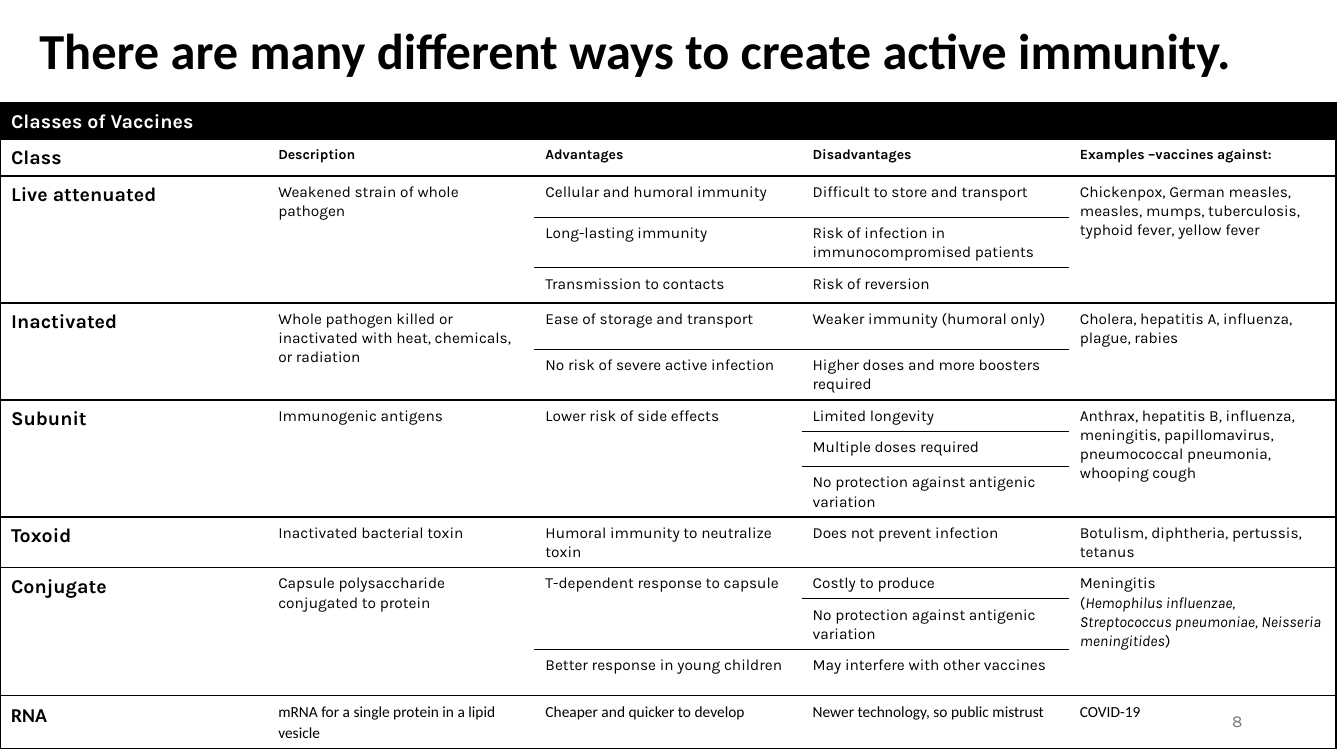
from dataclasses import dataclass
from typing import Any

from lxml import etree
from pptx import Presentation
from pptx import util as u
from pptx.dml.color import RGBColor
from pptx.enum import text
from pptx.oxml import ns

PX = 9144
BLACK = RGBColor(0x00, 0x00, 0x00)
WHITE = RGBColor(0xFF, 0xFF, 0xFF)
GRAY = RGBColor(0x79, 0x79, 0x79)
KARLA = "Karla"
CALIBRI = "Calibri"

COLUMNS = 5
COLUMN_WIDTH = 265
ROW_HEIGHTS = [33, 33, 41, 47, 35, 46, 47, 28, 35, 46, 46, 28, 46, 46, 46]
HEADINGS = ["Class", "Description", "Advantages", "Disadvantages", "Examples –vaccines against:"]
CELL_FORMAT = {
    "margin_left": u.Emu(11 * PX), "margin_right": u.Emu(11 * PX),
    "margin_top": u.Emu(6 * PX), "margin_bottom": u.Emu(6 * PX),
    "vertical_anchor": text.MSO_ANCHOR.TOP,
}
PARAGRAPH_FORMAT = {"line_spacing": 1.07, "space_after": u.Pt(8)}


@dataclass(frozen=True)
class Point:
    text: str
    rows: int = 1


@dataclass(frozen=True)
class VaccineClass:
    name: str
    description: str
    advantages: list[Point]
    disadvantages: list[Point]
    examples: str
    font: str = KARLA

    @property
    def rows(self) -> int:
        return len(self.disadvantages)


CLASSES = [
    VaccineClass(
        "Live attenuated", "Weakened strain of whole pathogen",
        [Point("Cellular and humoral immunity"), Point("Long-lasting immunity"),
         Point("Transmission to contacts")],
        [Point("Difficult to store and transport"),
         Point("Risk of infection in immunocompromised patients"), Point("Risk of reversion")],
        "Chickenpox, German measles, measles, mumps, tuberculosis, typhoid fever, yellow fever"),
    VaccineClass(
        "Inactivated", "Whole pathogen killed or inactivated with heat, chemicals, or radiation",
        [Point("Ease of storage and transport"), Point("No risk of severe active infection")],
        [Point("Weaker immunity (humoral only)"), Point("Higher doses and more boosters required")],
        "Cholera, hepatitis A, influenza, plague, rabies"),
    VaccineClass(
        "Subunit", "Immunogenic antigens",
        [Point("Lower risk of side effects", 3)],
        [Point("Limited longevity"), Point("Multiple doses required"),
         Point("No protection against antigenic variation")],
        "Anthrax, hepatitis B, influenza, meningitis, papillomavirus, "
        "pneumococcal pneumonia, whooping cough"),
    VaccineClass(
        "Toxoid", "Inactivated bacterial toxin",
        [Point("Humoral immunity to neutralize toxin")],
        [Point("Does not prevent infection")],
        "Botulism, diphtheria, pertussis, tetanus"),
    VaccineClass(
        "Conjugate", "Capsule polysaccharide conjugated to protein",
        [Point("T-dependent response to capsule", 2), Point("Better response in young children")],
        [Point("Costly to produce"), Point("No protection against antigenic variation"),
         Point("May interfere with other vaccines")],
        "Meningitis\n(*Hemophilus influenzae, Streptococcus pneumoniae, Neisseria meningitides*)"),
    VaccineClass(
        "RNA", "mRNA for a single protein in a lipid vesicle",
        [Point("Cheaper and quicker to develop")],
        [Point("Newer technology, so public mistrust")],
        "COVID-19", CALIBRI),
]


def apply(target: Any, values: dict[str, Any]) -> None:
    for name, value in values.items():
        setattr(target, name, value)


def write(p: Any, words: str, size: int, color: RGBColor, font: str = KARLA,
          bold: bool = False) -> None:
    for i, part in enumerate(words.split("*")):
        for j, line in enumerate(part.split("\n")):
            if j:
                p.add_line_break()
            r = p.add_run()
            r.text = line
            apply(r.font, {"name": font, "size": u.Pt(size), "bold": bold, "italic": i % 2 == 1})
            r.font.color.rgb = color


def draw_borders(cell: Any, sides: str) -> None:
    tcPr = cell._tc.get_or_add_tcPr()
    for side in "LRTB":
        ln = etree.SubElement(tcPr, ns.qn(f"a:ln{side}"), w=str(u.Pt(1)))
        if side in sides:
            fill = etree.SubElement(ln, ns.qn("a:solidFill"))
            etree.SubElement(fill, ns.qn("a:srgbClr"), val=str(BLACK))
        else:
            etree.SubElement(ln, ns.qn("a:noFill"))


def fill_cell(table: Any, row: int, col: int, words: str, size: int, font: str = KARLA,
              bold: bool = False, rows: int = 1, cols: int = 1,
              color: RGBColor = BLACK) -> None:
    cell = table.cell(row, col)
    last_row, last_col = row + rows - 1, col + cols - 1
    if rows * cols > 1:
        cell.merge(table.cell(last_row, last_col))
    for y in range(row, last_row + 1):
        for x in range(col, last_col + 1):
            sides = "T" if y == row else ""
            sides += "B" if y == last_row or y == row else ""
            sides += "L" if x == 0 else ""
            sides += "R" if x == COLUMNS - 1 or (x == col and last_col == COLUMNS - 1) else ""
            part = table.cell(y, x)
            draw_borders(part, sides)
            if color == WHITE:
                part.fill.solid()
                part.fill.fore_color.rgb = BLACK
            else:
                part.fill.background()
    apply(cell, CELL_FORMAT)
    p = cell.text_frame.paragraphs[0]
    apply(p, PARAGRAPH_FORMAT)
    write(p, words, size, color, font, bold)


def add_class(table: Any, row: int, vaccine: VaccineClass) -> None:
    fill_cell(table, row, 0, vaccine.name, 14, vaccine.font, True, vaccine.rows)
    fill_cell(table, row, 1, vaccine.description, 11, vaccine.font, rows=vaccine.rows)
    for col, points in ((2, vaccine.advantages), (3, vaccine.disadvantages)):
        y = row
        for point in points:
            fill_cell(table, y, col, point.text, 11, vaccine.font, rows=point.rows)
            y += point.rows
    fill_cell(table, row, 4, vaccine.examples, 11, vaccine.font, rows=vaccine.rows)


def add_vaccine_table(s: Any) -> None:
    frame = s.shapes.add_table(len(ROW_HEIGHTS), COLUMNS, 0, 102 * PX,
                               COLUMNS * COLUMN_WIDTH * PX, 632 * PX)
    table = frame.table
    apply(table, {"first_row": False, "horz_banding": False})
    for column in table.columns:
        column.width = u.Emu(COLUMN_WIDTH * PX)
    for table_row, height in zip(table.rows, ROW_HEIGHTS):
        table_row.height = u.Emu(height * PX)
    frame.height = u.Emu(632 * PX)
    fill_cell(table, 0, 0, "Classes of Vaccines", 14, bold=True, cols=COLUMNS, color=WHITE)
    for col, heading in enumerate(HEADINGS):
        fill_cell(table, 1, col, heading, 10 if col else 14, bold=True)
    row = 2
    for vaccine in CLASSES:
        add_class(table, row, vaccine)
        row += vaccine.rows


def main() -> None:
    prs = Presentation()
    apply(prs, {"slide_width": u.Emu(1333 * PX), "slide_height": u.Emu(750 * PX)})
    s = prs.slides.add_slide(prs.slide_layouts[5])

    sp = s.shapes.title
    apply(sp, {"left": 29 * PX, "top": 17 * PX, "width": 1249 * PX, "height": 71 * PX})
    tf = sp.text_frame
    apply(tf, {"word_wrap": True, "auto_size": text.MSO_AUTO_SIZE.NONE,
               "vertical_anchor": text.MSO_ANCHOR.MIDDLE})
    p = tf.paragraphs[0]
    apply(p, {"alignment": text.PP_ALIGN.LEFT, "line_spacing": 0.9})
    write(p, "There are many different ways to create active immunity.", 36, BLACK, CALIBRI, True)

    add_vaccine_table(s)

    tf = s.shapes.add_textbox(942 * PX, 695 * PX, 300 * PX, 40 * PX).text_frame
    apply(tf, {"word_wrap": True, "vertical_anchor": text.MSO_ANCHOR.MIDDLE})
    p = tf.paragraphs[0]
    p.alignment = text.PP_ALIGN.RIGHT
    write(p, "8", 12, GRAY)

    prs.save("out.pptx")


if __name__ == "__main__":
    main()
